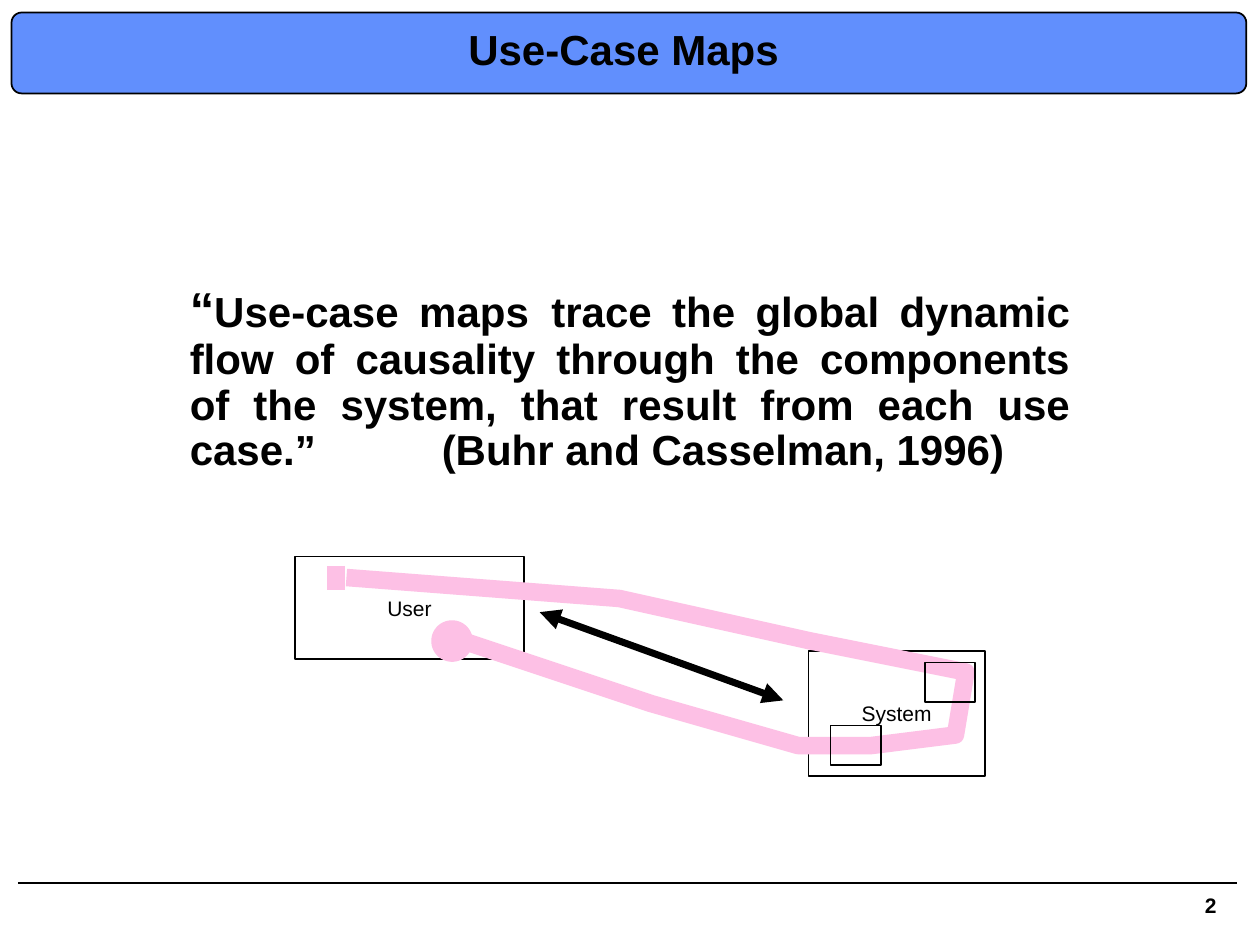
from dataclasses import dataclass

import pptx
import pptx.dml.color
import pptx.enum.shapes
import pptx.enum.text
import pptx.oxml.ns
import pptx.util
from lxml import etree

UNIT = pptx.util.Inches(10) // 120  # grid of 120 columns by 90 rows
FONT = "Arial"
BLACK, WHITE, BLUE, PINK = "000000", "FFFFFF", "618FFD", "FDC0E5"
SHAPE = pptx.enum.shapes.MSO_SHAPE
ALIGN = pptx.enum.text.PP_ALIGN
MIDDLE = pptx.enum.text.MSO_ANCHOR.MIDDLE
PATH_WIDTH = 10


@dataclass
class Area:
    column: float
    row: float
    columns: float
    rows: float

    def emu(self) -> list[int]:
        return [grid(n) for n in (self.column, self.row, self.columns, self.rows)]


@dataclass
class Figure:
    area: Area
    kind: int = SHAPE.RECTANGLE
    fill: str | None = None
    line: str = BLACK
    width: float = 1
    label: str = ""


@dataclass
class Run:
    text: str
    size: float
    bold: bool = True


def grid(units: float) -> int:
    return round(units * UNIT)


def colour(value: str) -> pptx.dml.color.RGBColor:
    return pptx.dml.color.RGBColor.from_string(value)


def set_all(target, values: dict) -> None:
    for name, value in values.items():
        setattr(target, name, value)


def style_line(shape, line: str, width: float) -> None:
    shape.line.color.rgb = colour(line)
    shape.line.width = pptx.util.Pt(width)


def write(frame, runs: list[Run], frame_format: dict, paragraph_format: dict) -> None:
    set_all(frame, frame_format)
    paragraph = frame.paragraphs[0]
    set_all(paragraph, paragraph_format)
    for item in runs:
        run = paragraph.add_run()
        run.text = item.text
        set_all(run.font, {"name": FONT, "size": pptx.util.Pt(item.size), "bold": item.bold})
        run.font.color.rgb = colour(BLACK)


def draw_figure(slide, figure: Figure):
    shape = slide.shapes.add_shape(figure.kind, *figure.area.emu())
    shape.shadow.inherit = False
    if figure.fill:
        shape.fill.solid()
        shape.fill.fore_color.rgb = colour(figure.fill)
    else:
        shape.fill.background()
    style_line(shape, figure.line, figure.width)
    if figure.label:
        write(shape.text_frame, [Run(figure.label, 12, False)],
              {"word_wrap": False, "vertical_anchor": MIDDLE}, {"alignment": ALIGN.CENTER})
    return shape


def draw_line(slide, start: tuple, end: tuple, line: str, width: float,
              arrows: bool = False) -> None:
    connector = slide.shapes.add_connector(
        pptx.enum.shapes.MSO_CONNECTOR.STRAIGHT, *map(grid, (*start, *end)))
    style_line(connector, line, width)
    if arrows:
        for end_name in ("a:headEnd", "a:tailEnd"):
            etree.SubElement(connector.line._get_or_add_ln(),
                             pptx.oxml.ns.qn(end_name), type="triangle")
    etree.SubElement(connector._element.spPr, pptx.oxml.ns.qn("a:effectLst"))


def draw_path(slide, points: list[tuple], line: str, width: float) -> None:
    first, *rest = [(grid(column), grid(row)) for column, row in points]
    builder = slide.shapes.build_freeform(*first)
    builder.add_line_segments(rest, close=False)
    path_shape = builder.convert_to_shape()
    path_shape.shadow.inherit = False
    path_shape.fill.background()
    style_line(path_shape, line, width)
    etree.SubElement(path_shape.line._get_or_add_ln(), pptx.oxml.ns.qn("a:round"))


def add_tab_stop(paragraph, position: int) -> None:
    tabs = etree.SubElement(paragraph._p.get_or_add_pPr(), pptx.oxml.ns.qn("a:tabLst"))
    etree.SubElement(tabs, pptx.oxml.ns.qn("a:tab"), pos=str(position), algn="l")


def add_title(slide) -> None:
    bar = draw_figure(slide, Figure(Area(1.1, 1.2, 117.6, 7.7),
                                    SHAPE.ROUNDED_RECTANGLE, BLUE))
    bar.adjustments[0] = 0.125
    title = slide.shapes.title
    set_all(title, dict(zip(("left", "top", "width", "height"),
                            Area(43.4, 3, 33, 4).emu())))
    write(title.text_frame, [Run("Use-Case Maps", 24)],
          {"word_wrap": True, "vertical_anchor": MIDDLE,
           "auto_size": pptx.enum.text.MSO_AUTO_SIZE.NONE},
          {"alignment": ALIGN.LEFT, "line_spacing": 0.87})
    bar._element.addnext(title._element)


def add_quote(slide) -> None:
    quote = slide.shapes.add_textbox(*Area(16.9, 26.6, 86.2, 19.2).emu()).text_frame
    runs = [
        Run("“", 28),
        Run("Use-case maps", 24),
        Run(" ", 28),
        Run("trace the global dynamic flow of causality through the components of "
            "the system, that result from each use case.”\t(Buhr and Casselman, 1996)", 24),
    ]
    write(quote, runs, {"word_wrap": True},
          {"alignment": ALIGN.JUSTIFY, "line_spacing": 0.9, "space_before": pptx.util.Pt(2)})
    add_tab_stop(quote.paragraphs[0], pptx.util.Inches(2))


def add_footer(slide) -> None:
    draw_line(slide, (1.7, 84.1), (117.8, 84.1), BLACK, 1)
    number = slide.shapes.add_textbox(*Area(112, 85, 4.7, 2.8).emu()).text_frame
    side, edge = pptx.util.Inches(0.07), pptx.util.Inches(0.03)
    write(number, [Run("2", 12)],
          {"word_wrap": True, "margin_left": side, "margin_right": side,
           "margin_top": edge, "margin_bottom": edge},
          {"alignment": ALIGN.RIGHT, "line_spacing": 0.85})


def add_use_case_map(slide) -> None:
    participants = [
        Figure(Area(28.1, 53, 21.8, 9.8), fill=WHITE, label="User"),
        Figure(Area(77, 62, 16.8, 11.9), fill=WHITE, label="System"),
    ]
    start_point = Figure(Area(41.9, 59.9, 2.3, 2.3), SHAPE.OVAL, PINK, PINK, PATH_WIDTH)
    components = [Figure(Area(column, row, 4.8, 3.8))
                  for column, row in ((88.1, 63.1), (79.1, 69.1))]
    causal_path = [(44, 61), (62, 67), (76, 71), (83, 71), (91, 70),
                   (92, 64), (77, 61), (59, 57), (33, 55)]

    for participant in participants:
        draw_figure(slide, participant)
    draw_line(slide, (51.4, 58.3), (74.6, 66.7), BLACK, 4, arrows=True)
    draw_figure(slide, start_point)
    draw_path(slide, causal_path, PINK, PATH_WIDTH)
    draw_line(slide, (32, 53.9), (32, 56.2), PINK, PATH_WIDTH)
    for component in components:
        draw_figure(slide, component)


def main() -> None:
    deck = pptx.Presentation()
    set_all(deck, {"slide_width": grid(120), "slide_height": grid(90)})
    slide = deck.slides.add_slide(deck.slide_layouts.get_by_name("Title Only"))
    add_footer(slide)
    add_title(slide)
    add_quote(slide)
    add_use_case_map(slide)
    deck.save("out.pptx")


if __name__ == "__main__":
    main()
